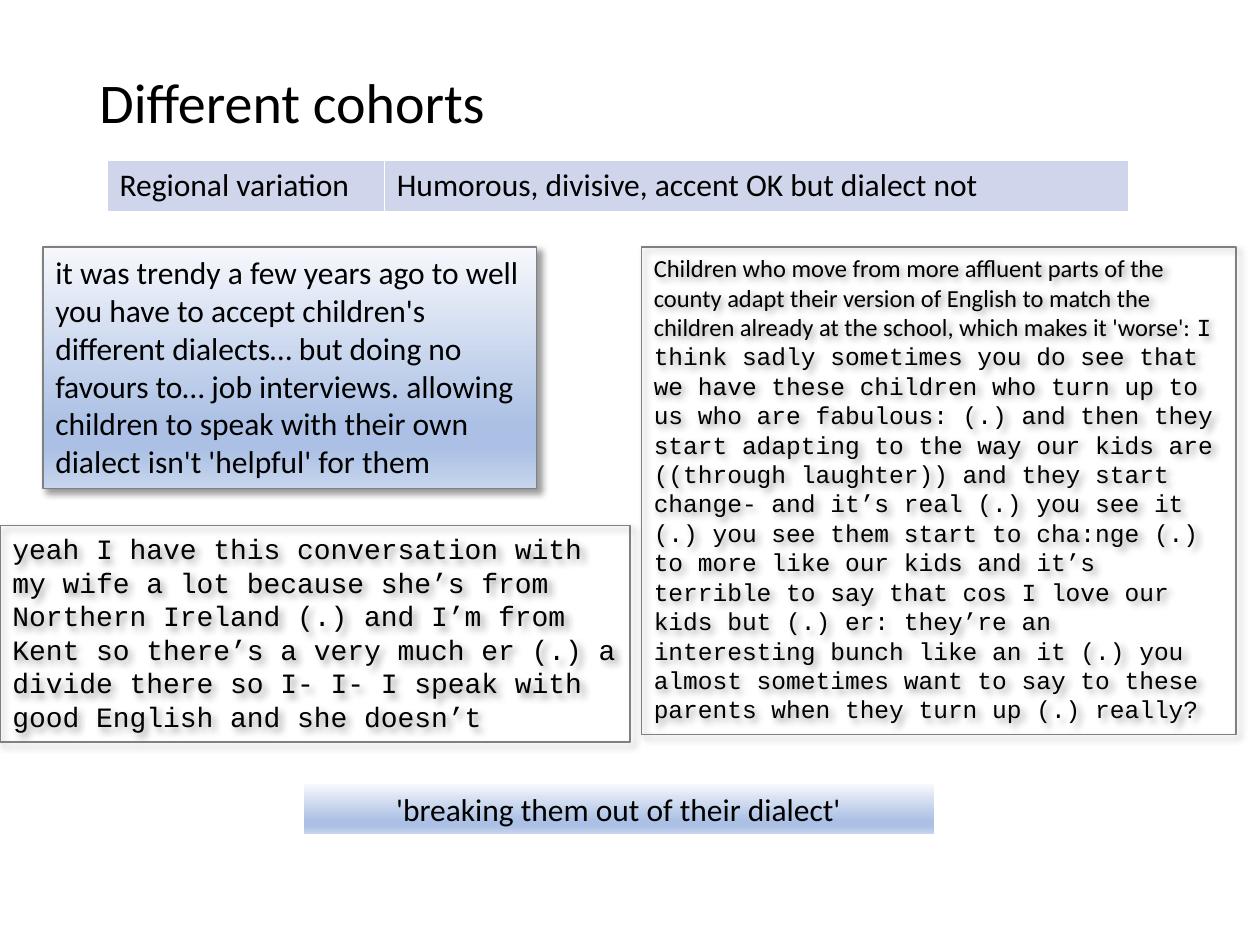
from lxml import etree
from pptx import Presentation
from pptx import util as u
from pptx.dml.color import RGBColor
from pptx.enum import shapes, text
from pptx.oxml import ns

SANS, MONO = "Calibri", "Courier New"
BLUE_FADE = [(0, "F6F8FC"), (74, "ABC0E4"), (83, "ABC0E4"), (100, "C7D5ED")]


def color(value):
    return RGBColor.from_string(value)


def add_xml(parent, tag, **attributes):
    """Append a DrawingML element and return it."""
    return etree.SubElement(parent, ns.qn("a:" + tag), attributes)


class SlideBuilder:
    ink = "000000"
    outline = "808080"
    cell_fill = "CFD5EA"
    cell_border = "FFFFFF"

    def __init__(self, page):
        self.page = page

    def add_spans(self, para, spans, size):
        """Add (words, font) spans to a paragraph."""
        for words, font in spans:
            span = para.add_run()
            span.text = words
            span.font.name = font
            span.font.size = u.Pt(size)
            span.font.color.rgb = color(self.ink)

    def title(self, words, *place):
        box = self.page.shapes.add_textbox(*map(u.Inches, place))
        frame = box.text_frame
        frame.word_wrap = True
        frame.vertical_anchor = text.MSO_ANCHOR.MIDDLE
        para = frame.paragraphs[0]
        para.line_spacing = 0.9
        self.add_spans(para, [(words, SANS)], 32)

    def table(self, rows, widths, left, top, height, size=18):
        table = self.page.shapes.add_table(
            len(rows), len(widths), u.Inches(left), u.Inches(top),
            u.Inches(sum(widths)), u.Inches(height)).table
        table.first_row = table.horz_banding = False
        for column, width in zip(table.columns, widths):
            column.width = u.Inches(width)
        for r, row in enumerate(rows):
            for c, words in enumerate(row):
                cell = table.cell(r, c)
                self.border(cell)
                cell.fill.solid()
                cell.fill.fore_color.rgb = color(self.cell_fill)
                self.add_spans(cell.text_frame.paragraphs[0], [(words, SANS)], size)

    def border(self, cell):
        properties = cell._tc.get_or_add_tcPr()
        for side in ("lnL", "lnR", "lnT", "lnB"):
            line = add_xml(properties, side, w=str(u.Pt(1)))
            add_xml(add_xml(line, "solidFill"), "srgbClr", val=self.cell_border)

    def quote(self, spans, size, *place, fade=False, framed=True,
              align=text.PP_ALIGN.LEFT):
        box = self.page.shapes.add_shape(
            shapes.MSO_SHAPE.RECTANGLE, *map(u.Inches, place))
        box.shadow.inherit = False
        if fade:
            self.fade(box)
        else:
            box.fill.background()
        if framed:
            box.line.color.rgb = color(self.outline)
            box.line.width = u.Pt(0.75)
            self.shadow(box)
        else:
            box.line.fill.background()
        frame = box.text_frame
        frame.word_wrap = True
        frame.auto_size = text.MSO_AUTO_SIZE.SHAPE_TO_FIT_TEXT
        frame.vertical_anchor = text.MSO_ANCHOR.TOP
        para = frame.paragraphs[0]
        para.alignment = align
        self.add_spans(para, spans, size)

    def fade(self, box):
        """Fill a box with the blue gradient, top to bottom."""
        box.fill.gradient()
        box.fill.gradient_angle = 270
        stops = box._element.spPr.find(".//" + ns.qn("a:gsLst"))
        for stop in list(stops):
            stops.remove(stop)
        for percent, value in BLUE_FADE:
            stop = add_xml(stops, "gs", pos=str(percent * 1000))
            add_xml(stop, "srgbClr", val=value)

    def shadow(self, box):
        effects = box._element.spPr.find(ns.qn("a:effectLst"))
        outer = add_xml(effects, "outerShdw", blurRad=str(u.Pt(4)),
                        dist=str(u.Pt(3)), dir=str(45 * 60000),
                        algn="tl", rotWithShape="0")
        add_xml(add_xml(outer, "srgbClr", val=self.ink), "alpha", val="40000")


def main():
    deck = Presentation()
    deck.slide_width, deck.slide_height = u.Inches(10), u.Inches(7.5)
    slide = SlideBuilder(deck.slides.add_slide(deck.slide_layouts[6]))

    slide.title("Different cohorts", 0.69, 0.4, 8.62, 0.87)
    slide.table(
        [["Regional variation", "Humorous, divisive, accent OK but dialect not"]],
        [2.2, 5.91], 0.85, 1.27, 0.41)
    slide.quote(
        [("it was trendy a few years ago to well you have to accept children's "
          "different dialects… but doing no favours to… job interviews. allowing "
          "children to speak with their own dialect isn't 'helpful' for them",
          SANS)],
        18, 0.34, 1.96, 3.92, 1.92, fade=True)
    slide.quote(
        [("Children who move from more affluent parts of the county adapt their "
          "version of English to match the children already at the school, which "
          "makes it 'worse': ", SANS),
         ("I think sadly sometimes you do see that we have these children who "
          "turn up to us who are fabulous: (.) and then they start adapting to "
          "the way our kids are ((through laughter)) and they start change- and "
          "it’s real (.) you see it (.) you see them start to cha:nge (.) to more "
          "like our kids and it’s terrible to say that cos I love our kids but "
          "(.) er: they’re an interesting bunch like an it (.) you almost "
          "sometimes want to say to these parents when they turn up (.) really?",
          MONO)],
        14, 5.09, 1.96, 4.72, 3.87)
    slide.quote(
        [("yeah I have this conversation with my wife a lot because she’s from "
          "Northern Ireland (.) and I’m from Kent so there’s a very much er (.) "
          "a divide there so I- I- I speak with good English and she doesn’t",
          MONO)],
        16, 0, 4.17, 5, 1.72)
    slide.quote([("'breaking them out of their dialect'", SANS)],
                18, 2.41, 6.22, 5, 0.4, fade=True, framed=False,
                align=text.PP_ALIGN.CENTER)

    deck.save("out.pptx")


if __name__ == "__main__":
    main()
